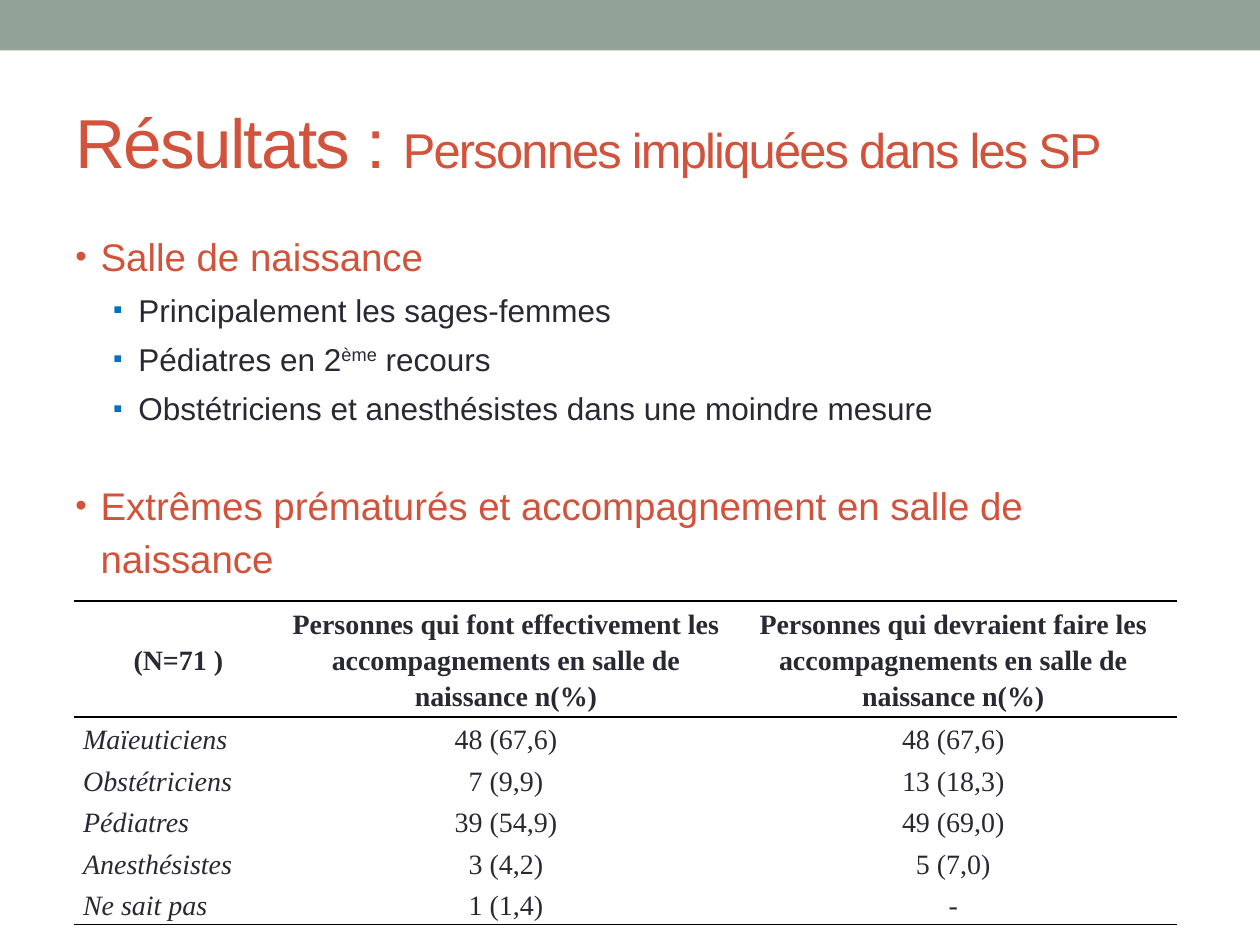
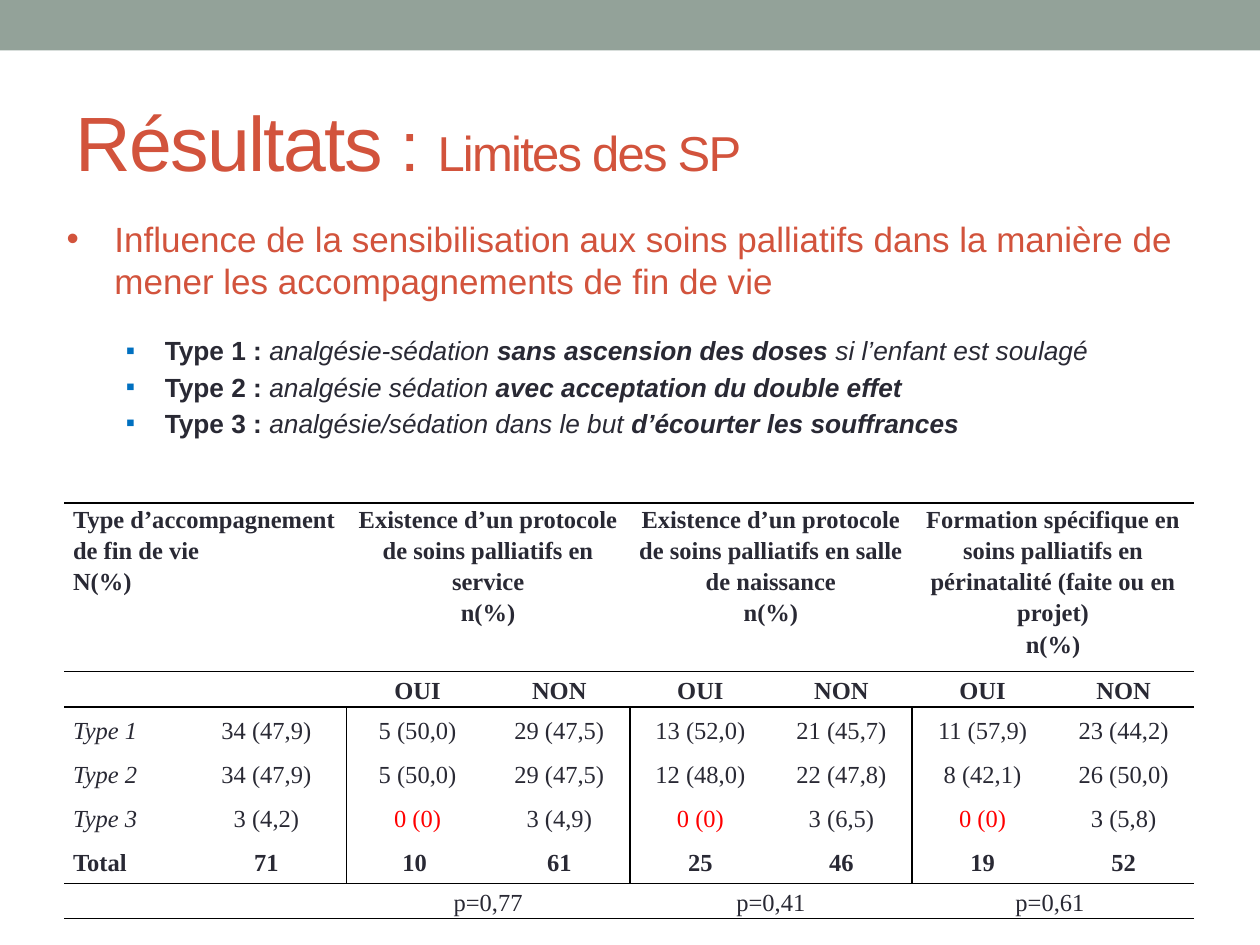
"""Build two result slides on palliative care: people involved and limits."""
from lxml.etree import SubElement
from pptx import Presentation
from pptx.dml.color import RGBColor
from pptx.enum.shapes import MSO_SHAPE
from pptx.enum.text import MSO_ANCHOR, PP_ALIGN
from pptx.oxml.ns import qn
from pptx.util import Inches, Pt

COLORS = {"band": "93A299", "accent": "D2533C", "ink": "292934",
          "bullet": "0070C0", "alert": "FF0000", "rule": "000000"}
SANS, SERIF = "Arial", "Times New Roman"

PEOPLE_TITLE = [("Résultats : ", 39.6), ("Personnes impliquées dans les SP", 27.9)]
LIMITS_TITLE = [("Résultats", 44), (" : ", 40), ("Limites des SP", 28)]

TOPIC = dict(size=22, color="accent", mark="•", mark_color="accent", mark_size=85,
             left=0.2, hang=0.2, spacing=1.14)
DETAIL = dict(size=18, color="ink", mark="▪", mark_color="bullet", mark_size=85,
              left=0.5, hang=0.2, spacing=1.3)
HEADLINE = dict(size=20, color="accent", mark="•", mark_color="accent",
                left=0.38, hang=0.38)
TYPE = dict(size=15, color="ink", mark="▪", mark_color="bullet",
            left=0.31, hang=0.31, spacing=1.15, align=PP_ALIGN.JUSTIFY)

PEOPLE_TEXT = [
    (TOPIC, [("Salle de naissance", "")]),
    (DETAIL, [("Principalement les sages-femmes", "")]),
    (DETAIL, [("Pédiatres en 2", ""), ("ème", "^"), (" recours", "")]),
    (DETAIL, [("Obstétriciens et anesthésistes dans une moindre mesure", "")]),
    (TOPIC | {"before": 28},
     [("Extrêmes prématurés et accompagnement en salle de naissance", "")]),
]
INFLUENCE_TEXT = [
    (HEADLINE, [("Influence de la sensibilisation aux soins palliatifs dans la manière "
                 "de mener les accompagnements de fin de vie", "")]),
]
TYPES_TEXT = [
    (TYPE, [("Type 1 :", "b"), (" analgésie-sédation ", "i"),
            ("sans ascension des doses", "bi"), (" si l’enfant est soulagé", "i")]),
    (TYPE, [("Type 2 : ", "b"), ("analgésie sédation ", "i"),
            ("avec acceptation du double effet", "bi")]),
    (TYPE, [("Type 3 : ", "b"), ("analgésie/sédation dans le but ", "i"),
            ("d’écourter les souffrances", "bi")]),
]

PEOPLE_TABLE = dict(
    at=(0.59, 4.77), size=16, cols=[1.65] + [3.55] * 2, heights=[0.82] + [0.33] * 5,
    rules={0, 1, 6}, dividers=set(), divided=(), merges=[],
    bold_rows={0}, centred={(0, 0)}, top_rows=set(), italic_rows=range(1, 6),
    rows=[
        ["(N=71 )",
         "Personnes qui font effectivement les accompagnements en salle de naissance n(%)",
         "Personnes qui devraient faire les accompagnements en salle de naissance n(%)"],
        ["Maïeuticiens", "48 (67,6)", "48 (67,6)"],
        ["Obstétriciens", "7 (9,9)", "13 (18,3)"],
        ["Pédiatres", "39 (54,9)", "49 (69,0)"],
        ["Anesthésistes", "3 (4,2)", "5 (7,0)"],
        ["Ne sait pas", "1 (1,4)", "-"],
    ])
LIMITS_TABLE = dict(
    at=(0.51, 3.99), size=14, cols=[0.97, 1.27, 1.13] + [1.12] * 5,
    heights=[1.13, 0.28] + [0.35] * 4 + [0.28],
    rules={0, 1, 2, 6, 7}, dividers={2, 4, 6}, divided=range(2, 6),
    merges=[(0, 0), (0, 2), (0, 4), (0, 6), (1, 0), (6, 2), (6, 4), (6, 6)],
    bold_rows={0, 1, 5}, centred=set(), top_rows={0}, italic_rows=range(2, 5),
    rows=[
        ["Type d’accompagnement de fin de vie\nN(%)", "",
         "Existence d’un protocole de soins palliatifs en service\nn(%)", "",
         "Existence d’un protocole de soins palliatifs en salle de naissance\nn(%)", "",
         "Formation spécifique en soins palliatifs en périnatalité "
         "(faite ou en projet)\nn(%)", ""],
        ["", ""] + ["OUI", "NON"] * 3,
        ["Type 1", "34 (47,9)", "5 (50,0)", "29 (47,5)", "13 (52,0)", "21 (45,7)",
         "11 (57,9)", "23 (44,2)"],
        ["Type 2", "34 (47,9)", "5 (50,0)", "29 (47,5)", "12 (48,0)", "22 (47,8)",
         "8 (42,1)", "26 (50,0)"],
        ["Type 3", "3 (4,2)", "0 (0)", "3 (4,9)", "0 (0)", "3 (6,5)", "0 (0)", "3 (5,8)"],
        ["Total", "71", "10 ", "61", "25", "46", "19", "52"],
        ["", "", "p=0,77", "", "p=0,41", "", "p=0,61 ", ""],
    ])


def rgb(name):
    return RGBColor.from_string(COLORS[name])


def style(span, font, size, color, marks=""):
    span.font.name, span.font.size = font, Pt(size)
    span.font.color.rgb = rgb(color)
    span.font.bold, span.font.italic = "b" in marks, "i" in marks
    if "^" in marks:
        span.font._element.set("baseline", "30000")


def add_box(page, left, top, width, height):
    box = page.shapes.add_textbox(*map(Inches, (left, top, width, height)))
    box.text_frame.word_wrap = True
    return box.text_frame


def add_page(deck, title):
    page = deck.slides.add_slide(deck.slide_layouts[6])
    band = page.shapes.add_shape(MSO_SHAPE.RECTANGLE, 0, 0, deck.slide_width, Inches(0.4))
    band.shadow.inherit = False
    band.fill.solid()
    band.fill.fore_color.rgb = rgb("band")
    band.line.fill.background()
    frame = add_box(page, 0.5, 0.58, 9, 1.08)
    frame.vertical_anchor = MSO_ANCHOR.MIDDLE
    for text, size in title:
        span = frame.paragraphs[0].add_run()
        span.text = text
        style(span, SANS, size, "accent")
        span.font._element.set("spc", "-100")
    return page


def add_bullet(para, look):
    props = para._p.get_or_add_pPr()
    props.set("marL", str(Inches(look["left"])))
    props.set("indent", str(-Inches(look["hang"])))
    color = SubElement(props, qn("a:buClr"))
    SubElement(color, qn("a:srgbClr"), val=COLORS[look["mark_color"]])
    SubElement(props, qn("a:buSzPct"), val=str(look.get("mark_size", 100) * 1000))
    SubElement(props, qn("a:buFont"), typeface=SANS)
    SubElement(props, qn("a:buChar"), char=look["mark"])


def add_bullets(page, area, items):
    frame = add_box(page, *area)
    for index, (look, spans) in enumerate(items):
        para = frame.add_paragraph() if index else frame.paragraphs[0]
        para.alignment = look.get("align", PP_ALIGN.LEFT)
        para.line_spacing = look.get("spacing", 1.0)
        para.space_before = Pt(look.get("before", 0))
        add_bullet(para, look)
        for text, marks in spans:
            span = para.add_run()
            span.text = text
            style(span, SANS, look["size"], look["color"], marks)


def set_borders(cell, drawn):
    props = cell._tc.get_or_add_tcPr()
    for index, (side, visible) in enumerate(drawn.items()):
        line = SubElement(props, qn(f"a:ln{side}"), w=str(Pt(1)))
        if visible:
            fill = SubElement(line, qn("a:solidFill"))
            SubElement(fill, qn("a:srgbClr"), val=COLORS["rule"])
        else:
            SubElement(line, qn("a:noFill"))
        props.insert(index, line)


def fill_cell(cell, text, row, col, data):
    cell.text_frame.text = text
    cell.fill.background()
    cell.margin_left = cell.margin_right = Inches(0.07)
    cell.margin_top = cell.margin_bottom = 0
    cell.vertical_anchor = MSO_ANCHOR.TOP if row in data["top_rows"] else MSO_ANCHOR.MIDDLE
    marks = "b" if row in data["bold_rows"] else ""
    if col == 0 and row in data["italic_rows"]:
        marks += "i"
    color = "alert" if text == "0 (0)" else "ink"
    centred = col > 0 or (row, col) in data["centred"]
    for para in cell.text_frame.paragraphs:
        para.alignment = PP_ALIGN.CENTER if centred else PP_ALIGN.LEFT
        para.line_spacing = 1.15
        for span in para.runs:
            style(span, SERIF, data["size"], color, marks)
        if not para.runs:
            para._p.get_or_add_endParaRPr().set("sz", str(data["size"] * 100))
    divided = data["dividers"] if row in data["divided"] else set()
    set_borders(cell, {"L": col in divided, "R": col + 1 in divided,
                       "T": row in data["rules"], "B": row + 1 in data["rules"]})


def add_grid(page, data):
    size = sum(data["cols"]), sum(data["heights"])
    grid = page.shapes.add_table(len(data["heights"]), len(data["cols"]),
                                 *map(Inches, data["at"] + size)).table
    grid.first_row = grid.horz_banding = False
    for column, width in zip(grid.columns, data["cols"]):
        column.width = Inches(width)
    for line, height in zip(grid.rows, data["heights"]):
        line.height = Inches(height)
    for row, texts in enumerate(data["rows"]):
        for col, text in enumerate(texts):
            fill_cell(grid.cell(row, col), text, row, col, data)
    for row, col in data["merges"]:
        grid.cell(row, col).merge(grid.cell(row, col + 1))


def main():
    deck = Presentation()
    deck.slide_width, deck.slide_height = Inches(10), Inches(7.5)

    people = add_page(deck, PEOPLE_TITLE)
    add_bullets(people, (0.5, 1.75, 9, 5.33), PEOPLE_TEXT)
    add_grid(people, PEOPLE_TABLE)

    limits = add_page(deck, LIMITS_TITLE)
    add_grid(limits, LIMITS_TABLE)
    add_bullets(limits, (0.43, 1.68, 9.15, 0.77), INFLUENCE_TEXT)
    add_bullets(limits, (0.9, 2.57, 8.68, 0.97), TYPES_TEXT)

    deck.save("out.pptx")


if __name__ == "__main__":
    main()
